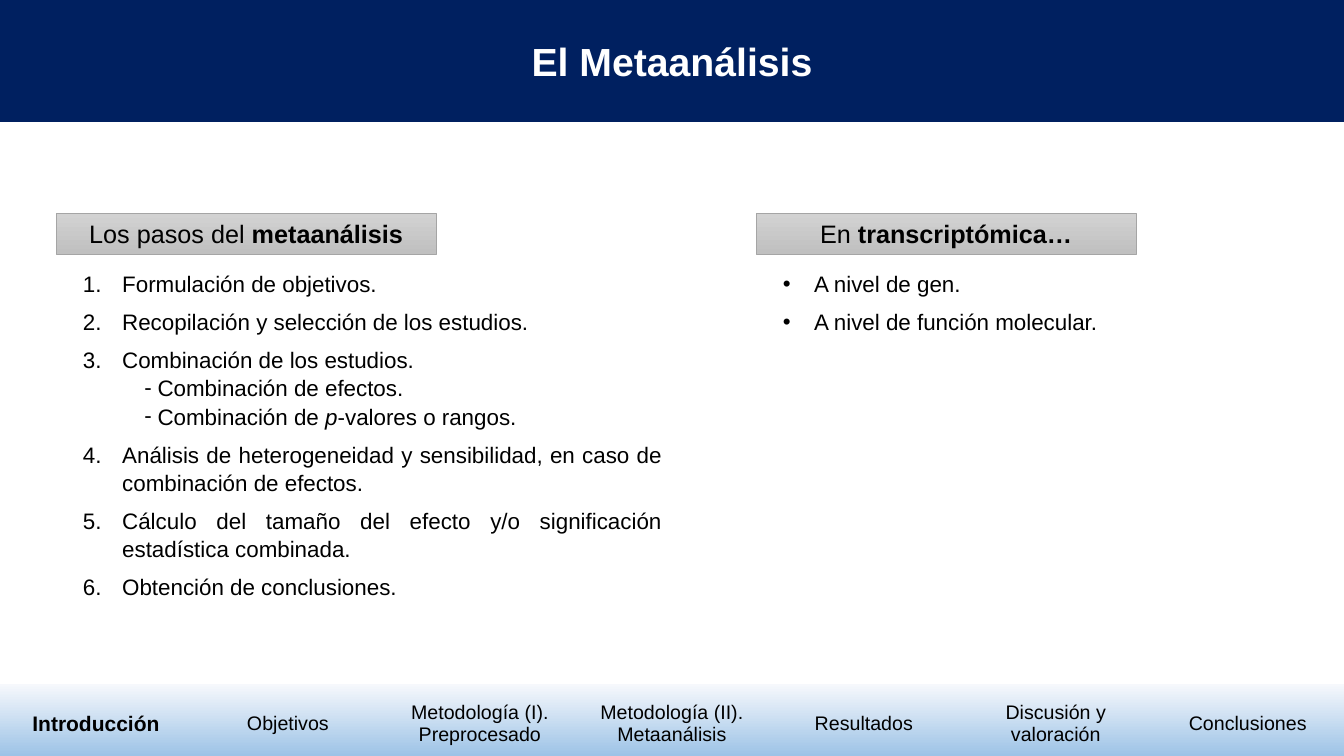
import lxml.etree
import pptx
import pptx.dml.color
import pptx.enum.dml
import pptx.enum.shapes
import pptx.enum.text
import pptx.oxml.ns
import pptx.util

RGBColor = pptx.dml.color.RGBColor
NAVY = RGBColor(0x00, 0x20, 0x60)
WHITE = RGBColor(0xFF, 0xFF, 0xFF)
BLACK = RGBColor(0x00, 0x00, 0x00)
GREY_EDGE = RGBColor(0xA5, 0xA5, 0xA5)
GREY_FADE = (RGBColor(0xD2, 0xD2, 0xD2), RGBColor(0xC0, 0xC0, 0xC0))
BLUE_FADE = (RGBColor(0xF6, 0xF8, 0xFC), RGBColor(0x9D, 0xC3, 0xE6))

ALIGN = pptx.enum.text.PP_ALIGN
MIDDLE = pptx.enum.text.MSO_ANCHOR.MIDDLE
PLAIN_TABLE_STYLE = "{2D5ABB26-0587-4C30-8999-92F81FD0307C}"

COLUMNS, ROWS = 24, 25
SECTIONS = [
    "Introducción",
    "Objetivos",
    "Metodología (I). Preprocesado",
    "Metodología (II). Metaanálisis",
    "Resultados",
    "Discusión y valoración",
    "Conclusiones",
]
STEPS = [
    (0, ["Formulación de objetivos."]),
    (0, ["Recopilación y selección de los estudios."]),
    (0, ["Combinación de los estudios."]),
    (1, ["Combinación de efectos."]),
    (1, ["Combinación de ", "p", "-valores o rangos."]),
    (0, ["Análisis de heterogeneidad y sensibilidad, en caso de combinación de efectos."]),
    (0, ["Cálculo del tamaño del efecto y/o significación estadística combinada."]),
    (0, ["Obtención de conclusiones."]),
]
LEVELS = [(0, ["A nivel de gen."]), (0, ["A nivel de función molecular."])]
NUMBER = ("a:buAutoNum", {"type": "arabicPeriod"})
DOT = ("a:buChar", {"char": "•"})
DASH = ("a:buChar", {"char": "-"})


class SlideBuilder:
    """Holds the style and the current slide, placed on a 24 by 25 grid."""

    font_name = "Arial"

    def __init__(self, presentation):
        self.width = presentation.slide_width
        self.height = presentation.slide_height
        self.slide = presentation.slides.add_slide(presentation.slide_layouts[3])

    def box(self, column, row, columns, rows):
        across, down = self.width / COLUMNS, self.height / ROWS
        return [round(value) for value in
                (column * across, row * down, columns * across, rows * down)]

    def place(self, shape, *cells):
        shape.left, shape.top, shape.width, shape.height = self.box(*cells)

    def style(self, run, size, color=BLACK, bold=False, italic=False):
        font = run.font
        font.name, font.size = self.font_name, pptx.util.Pt(size)
        font.bold, font.italic = bold, italic
        font.color.rgb = color

    def title(self, text, *cells):
        shape = self.slide.shapes.title
        self.place(shape, *cells)
        shape.fill.solid()
        shape.fill.fore_color.rgb = NAVY
        shape.line.color.rgb = NAVY
        shape.line.width = pptx.util.Pt(1)
        shape.text_frame.text = text
        shape.text_frame.vertical_anchor = MIDDLE
        paragraph = shape.text_frame.paragraphs[0]
        paragraph.alignment = ALIGN.CENTER
        self.style(paragraph.runs[0], 28, WHITE, bold=True)

    def faded_bar(self, colors, *cells):
        shape = self.slide.shapes.add_shape(
            pptx.enum.shapes.MSO_SHAPE.RECTANGLE, *self.box(*cells))
        shape.shadow.inherit = False
        shape.fill.gradient()
        shape.fill.gradient_angle = 270
        for stop, color in zip(shape.fill.gradient_stops, colors):
            stop.color.rgb = color
        shape.line.fill.background()
        return shape

    def heading(self, plain, strong, *cells):
        shape = self.faded_bar(GREY_FADE, *cells)
        shape.line.color.rgb = GREY_EDGE
        shape.line.width = pptx.util.Pt(0.5)
        shape.text_frame.vertical_anchor = MIDDLE
        paragraph = shape.text_frame.paragraphs[0]
        paragraph.alignment = ALIGN.CENTER
        for text, bold in ((plain, False), (strong, True)):
            run = paragraph.add_run()
            run.text = text
            self.style(run, 18, bold=bold)

    def bullet(self, paragraph, marker, margin, hanging):
        properties = paragraph._p.get_or_add_pPr()
        properties.set("marL", str(pptx.util.Inches(margin)))
        properties.set("indent", str(-pptx.util.Inches(hanging)))
        tag, attributes = marker
        font = lxml.etree.SubElement(properties, pptx.oxml.ns.qn("a:buFont"))
        font.set("typeface", self.font_name)
        lxml.etree.SubElement(properties, pptx.oxml.ns.qn(tag), attributes)

    def bullet_list(self, index, items, marker, hanging, *cells):
        shape = self.slide.placeholders[index]
        self.place(shape, *cells)
        frame = shape.text_frame
        frame.auto_size = pptx.enum.text.MSO_AUTO_SIZE.NONE
        frame.text = "\n".join("" for _ in items)
        for position, (level, parts) in enumerate(items):
            paragraph = frame.paragraphs[position]
            paragraph.level = level
            paragraph.alignment = ALIGN.JUSTIFY
            paragraph.line_spacing = 1.05
            paragraph.space_after = pptx.util.Pt(0)
            paragraph.space_before = pptx.util.Pt(7 if position and not level else 0)
            if level:
                self.bullet(paragraph, DASH, 0.74, 0.13)
            else:
                self.bullet(paragraph, marker, hanging, hanging)
            for order, text in enumerate(parts):
                run = paragraph.add_run()
                run.text = text
                self.style(run, 16, italic=order == 1)

    def navigation(self, sections, current, *cells):
        frame = self.slide.shapes.add_table(1, len(sections), *self.box(*cells))
        table = frame.table
        table.first_row = table.horz_banding = False
        style_id = table._tbl.tblPr.find(pptx.oxml.ns.qn("a:tableStyleId"))
        style_id.text = PLAIN_TABLE_STYLE
        for position, section in enumerate(sections):
            cell = table.cell(0, position)
            cell.fill.background()
            cell.vertical_anchor = MIDDLE
            cell.text_frame.text = section
            paragraph = cell.text_frame.paragraphs[0]
            paragraph.alignment = ALIGN.CENTER
            active = section == current
            self.style(paragraph.runs[0], 15 if active else 14, bold=active)


def main():
    presentation = pptx.Presentation()
    presentation.slide_width = pptx.util.Inches(13.33)
    presentation.slide_height = pptx.util.Inches(7.5)
    builder = SlideBuilder(presentation)
    builder.faded_bar(BLUE_FADE, 0, 22.63, COLUMNS, 2.37)
    builder.title("El Metaanálisis", 0, 0, COLUMNS, 4)
    builder.navigation(SECTIONS, "Introducción", 0, 23.03, COLUMNS, 1.83)
    builder.heading("Los pasos del ", "metaanálisis", 1, 7.06, 6.79, 1.34)
    builder.heading("En ", "transcriptómica…", 13.5, 7.06, 6.79, 1.34)
    builder.bullet_list(1, STEPS, NUMBER, 0.39, 1.3, 8.73, 10.7, 11)
    builder.bullet_list(2, LEVELS, DOT, 0.31, 13.8, 8.73, 10, 2.47)
    presentation.save("out.pptx")


if __name__ == "__main__":
    main()
